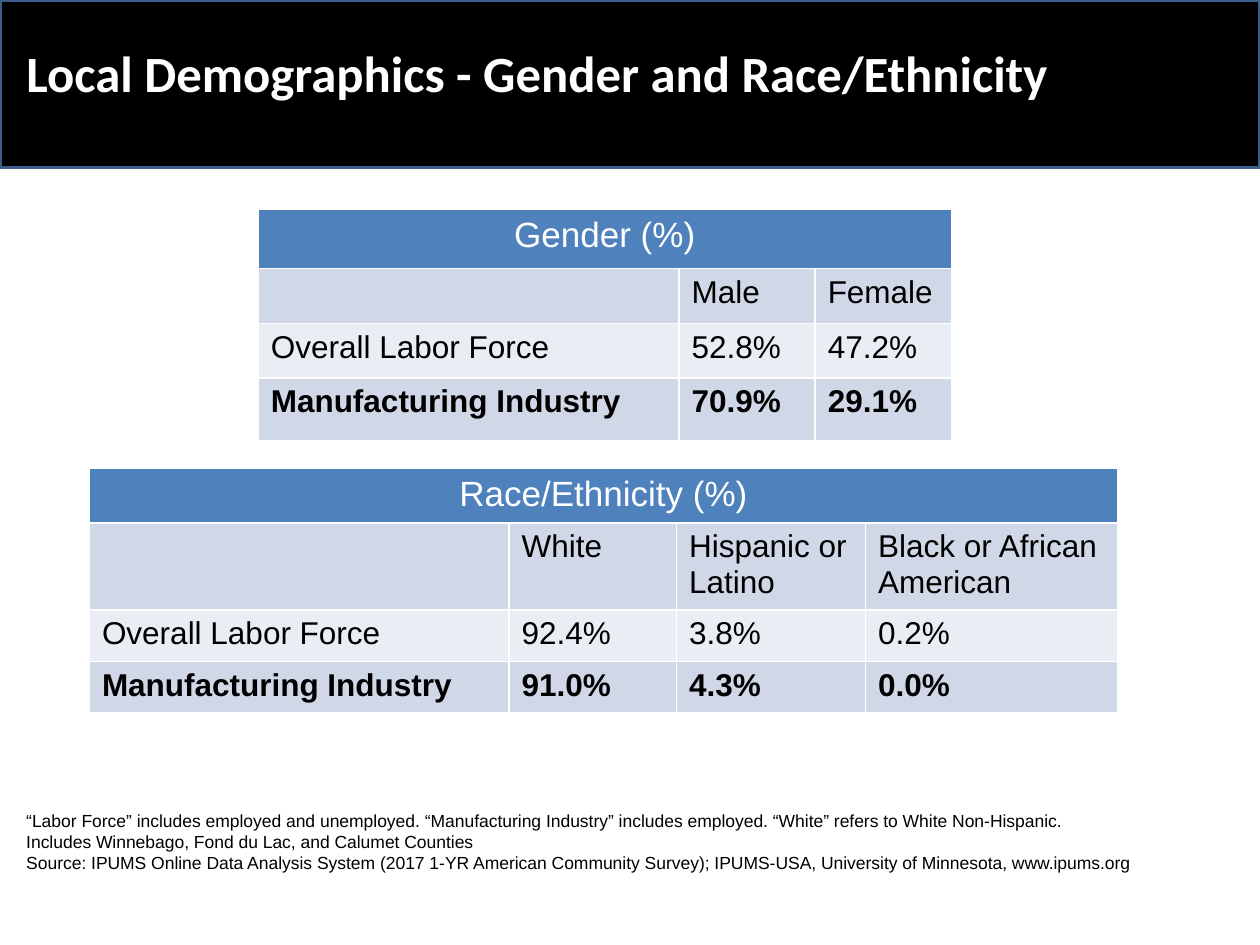
from pptx import Presentation
from pptx.dml.color import RGBColor
from pptx.enum.shapes import MSO_SHAPE
from pptx.enum.text import MSO_ANCHOR, PP_ALIGN
from pptx.oxml import parse_xml
from pptx.oxml.ns import nsdecls
from pptx.util import Inches, Pt

COLORS = {
    "black": "000000", "white": "FFFFFF", "bar_line": "3A5F8C",
    "header": "4F81BD", "band_dark": "D0D8E8", "band_light": "E9EDF4",
}


def rgb(name):
    return RGBColor.from_string(COLORS[name])


def write(tf, text, size=18, font="Arial", color="black", bold=False,
          align=PP_ALIGN.LEFT):
    for i, line in enumerate(text.split("\n")):
        p = tf.add_paragraph() if i else tf.paragraphs[0]
        p.alignment = align
        r = p.add_run()
        r.text = line
        r.font.size, r.font.name, r.font.bold = Pt(size), font, bold
        r.font.color.rgb = rgb(color)


prs = Presentation()
prs.slide_width, prs.slide_height = Inches(10), Inches(7.5)
s = prs.slides.add_slide(prs.slide_layouts[5])

# Title on a black bar
title = s.shapes.title
title.left, title.top = Inches(0.11), Inches(0.28)
title.width, title.height = Inches(8.47), Inches(0.59)
title.text_frame.vertical_anchor = MSO_ANCHOR.TOP
write(title.text_frame, "Local Demographics - Gender and Race/Ethnicity",
      size=29, font="Calibri", color="white", bold=True)

bar = s.shapes.add_shape(MSO_SHAPE.RECTANGLE, 0, 0, Inches(10), Inches(1.33))
bar.shadow.inherit = False
bar.fill.solid()
bar.fill.fore_color.rgb = rgb("black")
bar.line.color.rgb = rgb("bar_line")
bar.line.width = Pt(2)
title.element.addprevious(bar.element)  # bar goes behind the title

# Tables: left, top, column widths, row heights, rows of text
tables = [
    (2.05, 1.66, [3.34, 1.08, 1.08], [0.47, 0.44, 0.43, 0.5], [
        ["Gender (%)", "", ""],
        ["", "Male", "Female"],
        ["Overall Labor Force", "52.8%", "47.2%"],
        ["Manufacturing Industry", "70.9%", "29.1%"]]),
    (0.71, 3.72, [3.33, 1.33, 1.5, 2], [0.43, 0.69, 0.41, 0.41], [
        ["Race/Ethnicity (%)", "", "", ""],
        ["", "White", "Hispanic or Latino", "Black or African American"],
        ["Overall Labor Force", "92.4%", "3.8%", "0.2%"],
        ["Manufacturing Industry", "91.0%", "4.3%", "0.0%"]]),
]
row_fills = ["header", "band_dark", "band_light", "band_dark"]

for left, top, widths, heights, rows in tables:
    table = s.shapes.add_table(
        len(rows), len(widths), Inches(left), Inches(top),
        Inches(sum(widths)), Inches(sum(heights))).table
    for col, width in zip(table.columns, widths):
        col.width = Inches(width)
    for row, height in zip(table.rows, heights):
        row.height = Inches(height)
    table.cell(0, 0).merge(table.cell(0, len(widths) - 1))

    for i, row in enumerate(rows):
        for j, text in enumerate(row):
            cell = table.cell(i, j)
            cell.fill.solid()
            cell.fill.fore_color.rgb = rgb(row_fills[i])
            tcPr = cell._tc.get_or_add_tcPr()
            for k, side in enumerate(["lnL", "lnR", "lnT", "lnB"]):
                tcPr.insert(k, parse_xml(
                    f'<a:{side} {nsdecls("a")} w="{Pt(1)}"><a:solidFill>'
                    f'<a:srgbClr val="{COLORS["white"]}"/>'
                    f'</a:solidFill></a:{side}>'))
            if text and i == 0:
                write(cell.text_frame, text, size=20, color="white",
                      align=PP_ALIGN.CENTER)
            elif text:
                write(cell.text_frame, text, bold=i == len(rows) - 1)

# Notes and source
note = s.shapes.add_textbox(Inches(0.11), Inches(6.38), Inches(9.68), Inches(0.76))
note.fill.solid()
note.fill.fore_color.rgb = rgb("white")
note.text_frame.word_wrap = True
write(note.text_frame,
      "“Labor Force” includes employed and unemployed. “Manufacturing Industry” "
      "includes employed. “White” refers to White Non-Hispanic.\n"
      "Includes Winnebago, Fond du Lac, and Calumet Counties\n"
      "Source: IPUMS Online Data Analysis System (2017 1-YR American Community "
      "Survey); IPUMS-USA, University of Minnesota, www.ipums.org", size=10)

prs.save("out.pptx")
